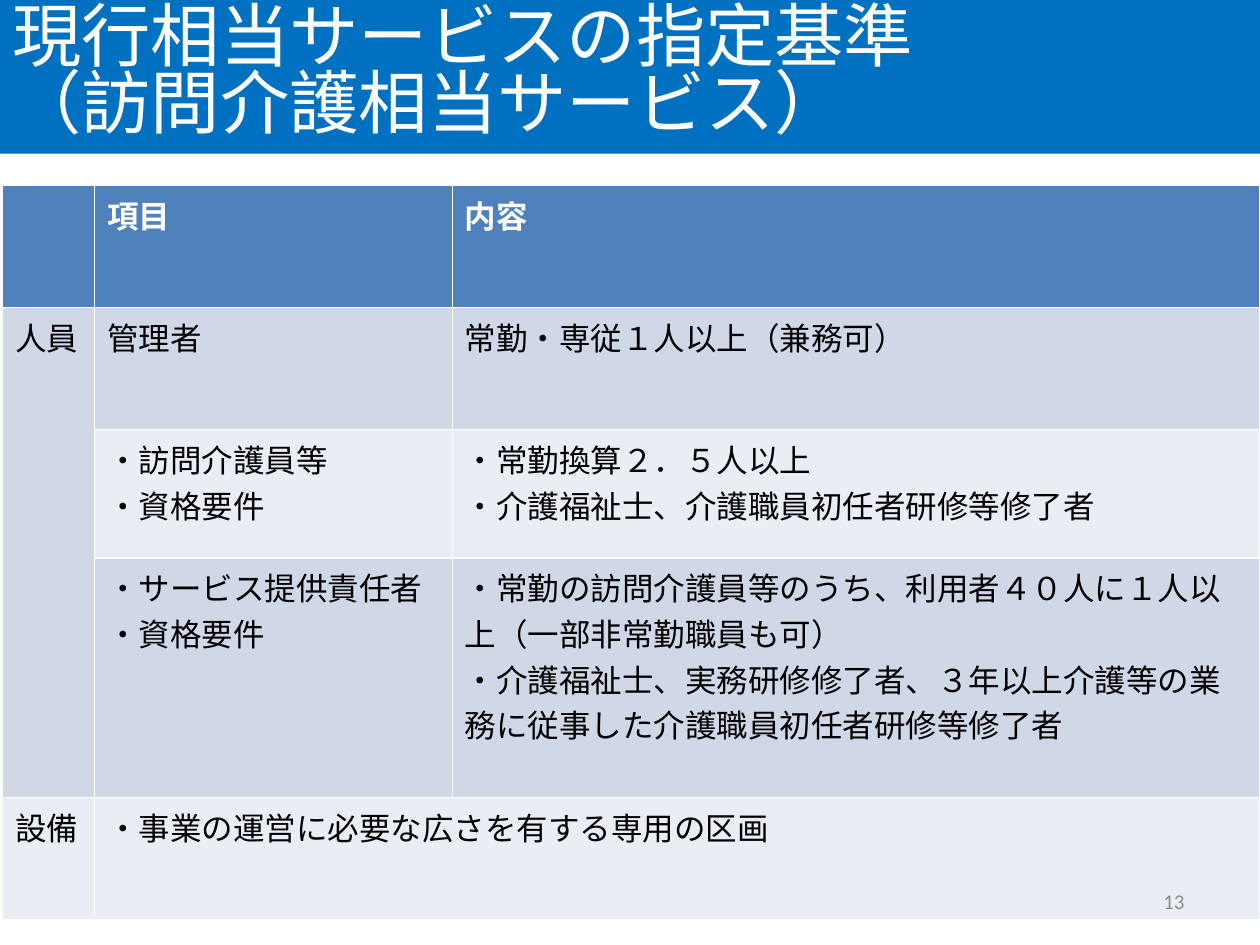
"""Build the slide on designation standards for home-visit care services."""
from pptx import Presentation
from pptx.dml.color import RGBColor
from pptx.enum import shapes, text
from pptx import util as u

BLUE = RGBColor(0x00, 0x70, 0xC0)
HEADER = RGBColor(0x4F, 0x81, 0xBD)
DARK_BAND = RGBColor(0xD0, 0xD8, 0xE8)
LIGHT_BAND = RGBColor(0xE9, 0xED, 0xF4)
WHITE = RGBColor(0xFF, 0xFF, 0xFF)
BLACK = RGBColor(0x00, 0x00, 0x00)
GREY = RGBColor(0x8C, 0x8C, 0x8C)

COLUMN_WIDTHS = [7.3, 28.4, 64.1]
ROW_HEIGHTS = [9.7, 9.7, 10.2, 19, 9.7]
ROW_FILLS = [HEADER, DARK_BAND, LIGHT_BAND, DARK_BAND, LIGHT_BAND]
STANDARDS = [
    ["", "項目", "内容"],
    ["人員", "管理者", "常勤・専従１人以上（兼務可）"],
    ["", "・訪問介護員等\n・資格要件",
     "・常勤換算２．５人以上\n・介護福祉士、介護職員初任者研修等修了者"],
    ["", "・サービス提供責任者\n・資格要件",
     "・常勤の訪問介護員等のうち、利用者４０人に１人以上（一部非常勤職員も可）\n"
     "・介護福祉士、実務研修修了者、３年以上介護等の業務に従事した介護職員初任者研修等修了者"],
    ["設備", "・事業の運営に必要な広さを有する専用の区画", ""],
]
MERGES = [((1, 0), (3, 0)), ((4, 1), (4, 2))]


class Page:
    """Hold the style and the current page, measured on a 100 by 75 grid."""

    font = "Calibri"
    columns, rows = 100, 75

    def __init__(self, deck):
        self.cell_width = deck.slide_width / self.columns
        self.cell_height = deck.slide_height / self.rows
        self.shapes = deck.slides.add_slide(deck.slide_layouts[6]).shapes

    def across(self, count):
        return u.Emu(round(count * self.cell_width))

    def down(self, count):
        return u.Emu(round(count * self.cell_height))

    def place(self, left, top, width, height):
        return self.across(left), self.down(top), self.across(width), self.down(height)

    def set_words(self, frame, words, size, color, bold=False,
                  align=text.PP_ALIGN.LEFT, spacing=None):
        frame.text = words
        frame.word_wrap = True
        for para in frame.paragraphs:
            para.alignment = align
            para.line_spacing = spacing
            for span in para.runs:
                span.font.name = self.font
                span.font.size = u.Pt(size)
                span.font.bold = bold
                span.font.color.rgb = color

    def banner(self, area, words):
        box = self.shapes.add_shape(shapes.MSO_SHAPE.RECTANGLE, *self.place(*area))
        box.shadow.inherit = False
        box.fill.solid()
        box.fill.fore_color.rgb = BLUE
        box.line.fill.background()
        box.text_frame.vertical_anchor = text.MSO_ANCHOR.MIDDLE
        self.set_words(box.text_frame, words, 39.6, WHITE, spacing=0.81)

    def table(self, left, top):
        area = self.place(left, top, sum(COLUMN_WIDTHS), sum(ROW_HEIGHTS))
        grid = self.shapes.add_table(len(ROW_HEIGHTS), len(COLUMN_WIDTHS), *area).table
        for column, width in zip(grid.columns, COLUMN_WIDTHS):
            column.width = self.across(width)
        for row, height, fill, entries in zip(grid.rows, ROW_HEIGHTS, ROW_FILLS, STANDARDS):
            row.height = self.down(height)
            heading = fill == HEADER
            for cell, words in zip(row.cells, entries):
                cell.fill.solid()
                cell.fill.fore_color.rgb = fill
                if words:
                    self.set_words(cell.text_frame, words, 18,
                                   WHITE if heading else BLACK, bold=heading)
        for first, last in MERGES:
            grid.cell(*first).merge(grid.cell(*last))

    def number(self, area, words):
        box = self.shapes.add_textbox(*self.place(*area))
        box.text_frame.vertical_anchor = text.MSO_ANCHOR.MIDDLE
        self.set_words(box.text_frame, words, 12, GREY, align=text.PP_ALIGN.RIGHT)


def main():
    deck = Presentation()
    deck.slide_width, deck.slide_height = u.Inches(10), u.Inches(7.5)
    page = Page(deck)
    page.banner((0, -0.3, 100, 12.5), "現行相当サービスの指定基準\v（訪問介護相当サービス）")
    page.table(0.2, 14.7)
    page.number((71.7, 69.5, 23.3, 4), "13")
    deck.save("out.pptx")


if __name__ == "__main__":
    main()
